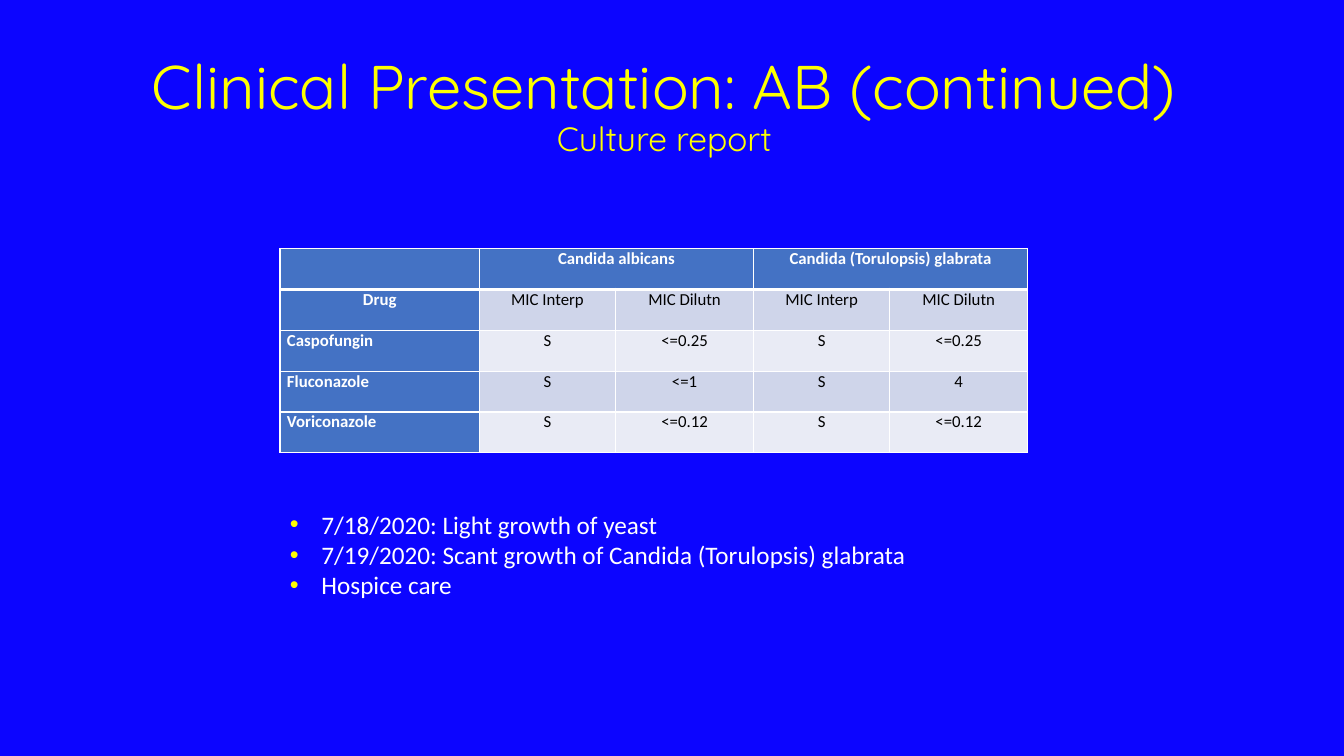
from dataclasses import dataclass

from lxml import etree
from pptx import Presentation
from pptx.dml.color import RGBColor
from pptx.enum import text
from pptx.oxml import ns
from pptx.util import Pt


@dataclass(frozen=True)
class Theme:
    """Colours, fonts and type sizes of the slide."""
    background: str = "0C05FF"
    accent: str = "FFFF00"
    light: str = "FFFFFF"
    dark: str = "000000"
    header: str = "4472C4"
    bands: tuple = ("E9EBF5", "CFD5EA")
    title_font: str = "Quicksand"
    body_font: str = "Calibri"
    title_size: int = 44
    subtitle_size: int = 24
    table_size: int = 12
    bullet_size: int = 18


THEME = Theme()
COLUMN_WIDTHS = (142.5, 97.2, 98.6, 97.2, 98.6)
CULTURE_ROWS = (
    ("", "Candida albicans", "", "Candida (Torulopsis) glabrata", ""),
    ("Drug",) + ("MIC Interp", "MIC Dilutn") * 2,
    ("Caspofungin", "S", "<=0.25", "S", "<=0.25"),
    ("Fluconazole", "S", "<=1", "S", "4"),
    ("Voriconazole", "S", "<=0.12", "S", "<=0.12"),
)
FINDINGS = (
    "7/18/2020: Light growth of yeast",
    "7/19/2020: Scant growth of Candida (Torulopsis) glabrata",
    "Hospice care",
)


def style_font(font, name, size, color, bold=False):
    """Set the typeface, size, colour and weight of a font."""
    font.name, font.size, font.bold = name, Pt(size), bold
    font.color.rgb = RGBColor.from_string(color)


def add_text_frame(slide, box):
    """Add a wrapping text box and return its text frame."""
    frame = slide.shapes.add_textbox(*map(Pt, box)).text_frame
    frame.word_wrap = True
    return frame


def add_title(slide, box, title, subtitle):
    """Place the title and, under it, the smaller subtitle."""
    frame = add_text_frame(slide, box)
    frame.vertical_anchor = text.MSO_ANCHOR.MIDDLE
    paragraph = frame.paragraphs[0]
    paragraph.alignment = text.PP_ALIGN.CENTER
    paragraph.line_spacing = 0.9
    title_run = paragraph.add_run()
    title_run.text = title
    style_font(title_run.font, THEME.title_font, THEME.title_size, THEME.accent)
    paragraph.add_line_break()
    subtitle_run = paragraph.add_run()
    subtitle_run.text = subtitle
    style_font(subtitle_run.font, THEME.title_font, THEME.subtitle_size, THEME.accent)


def add_borders(cell, top, bottom):
    """Draw the four borders of a cell, with the given top and bottom widths."""
    properties = cell._tc.get_or_add_tcPr()
    for side, width in (("L", 1), ("R", 1), ("T", top), ("B", bottom)):
        line = etree.SubElement(properties, ns.qn(f"a:ln{side}"), w=str(Pt(width)))
        fill = etree.SubElement(line, ns.qn("a:solidFill"))
        etree.SubElement(fill, ns.qn("a:srgbClr"), val=THEME.light)


def style_cell(cell, row, column, value):
    """Fill one cell of the culture table and set its text."""
    heading = row == 0 or column == 0
    cell.margin_left = cell.margin_right = Pt(5)
    cell.margin_top = cell.margin_bottom = 0
    add_borders(cell, top=3 if row == 1 else 1, bottom=3 if row == 0 else 1)
    cell.fill.solid()
    fill = THEME.header if heading else THEME.bands[row % 2]
    cell.fill.fore_color.rgb = RGBColor.from_string(fill)
    paragraph = cell.text_frame.paragraphs[0]
    paragraph.text = value
    drug_name = column == 0 and row > 1
    paragraph.alignment = text.PP_ALIGN.LEFT if drug_name else text.PP_ALIGN.CENTER
    color = THEME.light if heading else THEME.dark
    style_font(paragraph.font, THEME.body_font, THEME.table_size, color, heading)


def add_culture_table(slide, box, rows):
    """Place the table of drug susceptibility per organism."""
    table = slide.shapes.add_table(len(rows), len(COLUMN_WIDTHS), *map(Pt, box)).table
    for column, width in zip(table.columns, COLUMN_WIDTHS):
        column.width = Pt(width)
    for row, values in enumerate(rows):
        for column, value in enumerate(values):
            style_cell(table.cell(row, column), row, column, value)
    for first in (1, 3):
        table.cell(0, first).merge(table.cell(0, first + 1))


def add_findings(slide, box, findings):
    """Place the bulleted list of findings."""
    frame = add_text_frame(slide, box)
    frame.text = "\n".join(findings)
    for paragraph in frame.paragraphs:
        style_font(paragraph.font, THEME.body_font, THEME.bullet_size, THEME.light)
        properties = paragraph._p.get_or_add_pPr()
        properties.set("marL", str(Pt(22.5)))
        properties.set("indent", str(-Pt(22.5)))
        bullet_color = etree.Element(ns.qn("a:buClr"))
        etree.SubElement(bullet_color, ns.qn("a:srgbClr"), val=THEME.accent)
        bullet_font = etree.Element(ns.qn("a:buFont"), typeface="Arial")
        bullet = etree.Element(ns.qn("a:buChar"), char="•")
        for position, element in enumerate((bullet_color, bullet_font, bullet)):
            properties.insert(position, element)


def build_culture_slide(presentation):
    """Add the culture report slide."""
    slide = presentation.slides.add_slide(presentation.slide_layouts[6])
    slide.background.fill.solid()
    slide.background.fill.fore_color.rgb = RGBColor.from_string(THEME.background)
    add_title(slide, (60.5, 24.5, 828, 104.4),
              "Clinical Presentation: AB (continued)", "Culture report")
    add_culture_table(slide, (200, 177.5, sum(COLUMN_WIDTHS), 146), CULTURE_ROWS)
    add_findings(slide, (200, 360, 480, 72.7), FINDINGS)


def main():
    """Build and save the presentation."""
    presentation = Presentation()
    presentation.slide_width, presentation.slide_height = Pt(960), Pt(540)
    build_culture_slide(presentation)
    presentation.save("out.pptx")


if __name__ == "__main__":
    main()
